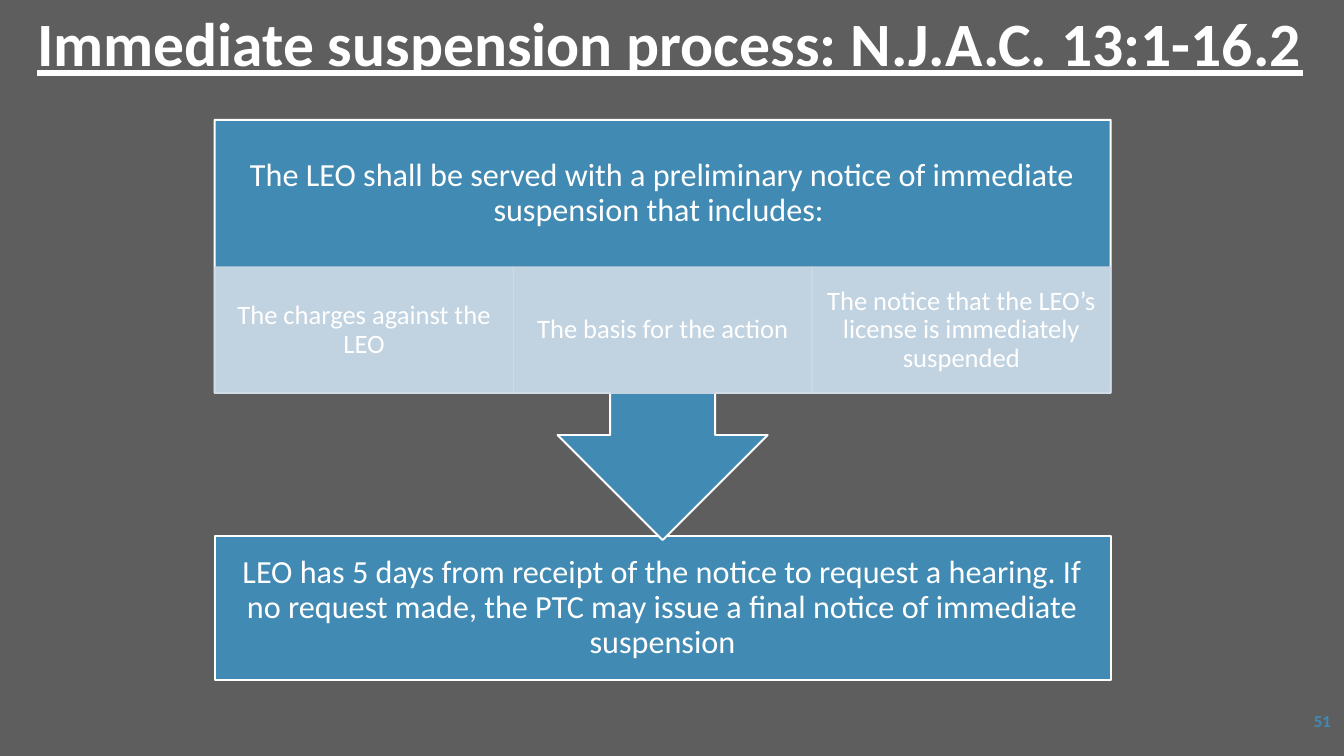
"""Build the slide on the immediate suspension process as a callout flow."""
from dataclasses import dataclass

from lxml import etree
from pptx import Presentation
from pptx.dml.color import RGBColor
from pptx.enum import shapes, text
from pptx.oxml import ns
from pptx.util import Cm, Pt


@dataclass(frozen=True)
class Theme:
    font: str = "Calibri"
    background: RGBColor = RGBColor(0x5E, 0x5E, 0x5E)
    white: RGBColor = RGBColor(0xFF, 0xFF, 0xFF)
    blue: RGBColor = RGBColor(0x41, 0x8A, 0xB3)
    pale: RGBColor = RGBColor(0xCF, 0xDA, 0xE5)
    title: int = 44
    step: int = 23
    detail: int = 19
    number: int = 12


theme = Theme()
MIDDLE = text.MSO_ANCHOR.MIDDLE
CENTER = text.PP_ALIGN.CENTER


def write(box, words, size, insets, anchor=MIDDLE, align=CENTER, color=theme.white):
    """Set the single paragraph of a box; insets are left, top, right, bottom in cm."""
    frame = box.text_frame
    frame.word_wrap = True
    frame.vertical_anchor = anchor
    frame.margin_left, frame.margin_top, frame.margin_right, frame.margin_bottom = map(Cm, insets)
    para = frame.paragraphs[0]
    para.text = words
    para.alignment = align
    para.font.name = theme.font
    para.font.size = Pt(size)
    para.font.color.rgb = color
    return para


def add_panel(kind, left, top, width, height, fill, line, weight):
    """Add a filled and outlined shape, measured in cm."""
    panel = page.shapes.add_shape(kind, Cm(left), Cm(top), Cm(width), Cm(height))
    panel.shadow.inherit = False
    panel.fill.solid()
    panel.fill.fore_color.rgb = fill
    panel.line.color.rgb = line
    panel.line.width = Pt(weight)
    return panel


deck = Presentation()
deck.slide_width, deck.slide_height = Cm(33.87), Cm(19.05)
page = deck.slides.add_slide(deck.slide_layouts[6])
page.background.fill.solid()
page.background.fill.fore_color.rgb = theme.background

title_box = page.shapes.add_textbox(0, 0, Cm(33.78), Cm(2.13))
title = write(title_box, "Immediate suspension process: N.J.A.C. 13:1-16.2", theme.title,
              (0.25, 0.13, 0.25, 0.13), anchor=text.MSO_ANCHOR.TOP)
title.font.bold = True
title.font.underline = True

flow_left, flow_width = 5.41, 22.58
detail_top, detail_height = 6.73, 3.18
inset = 0.46

hearing = add_panel(shapes.MSO_SHAPE.RECTANGLE, flow_left, 13.51, flow_width, 3.63,
                    theme.blue, theme.white, 1.35)
notice = add_panel(shapes.MSO_SHAPE.DOWN_ARROW_CALLOUT, flow_left, 3.02, flow_width, 10.59,
                   theme.blue, theme.white, 1.35)
steps = [
    (hearing, "LEO has 5 days from receipt of the notice to request a hearing. If no request made, "
              "the PTC may issue a final notice of immediate suspension", inset),
    (notice, "The LEO shall be served with a preliminary notice of immediate suspension "
             "that includes: ", inset + detail_height),
]
for panel, words, bottom in steps:
    write(panel, words, theme.step, (inset, inset, inset, bottom)).line_spacing = 0.9

details = [
    "The charges against the LEO",
    "The basis for the action",
    "The notice that the LEO’s license is immediately suspended",
]
detail_width = flow_width / len(details)
for column, words in enumerate(details):
    cell = add_panel(shapes.MSO_SHAPE.RECTANGLE, flow_left + column * detail_width, detail_top,
                     detail_width, detail_height, theme.pale, theme.pale, 0.85)
    for color in cell._element.spPr.iter(ns.qn("a:srgbClr")):
        etree.SubElement(color, ns.qn("a:alpha"), val="90000")
    write(cell, words, theme.detail, (0.38, 0.08, 0.38, 0.08)).line_spacing = 0.9

number_box = page.shapes.add_textbox(Cm(31.5), Cm(17.66), Cm(2.29), Cm(1.02))
number = write(number_box, "51", theme.number, (0.25, 0.13, 0.25, 0.13),
               align=text.PP_ALIGN.RIGHT, color=theme.blue)
number.font.bold = True

deck.save("out.pptx")
